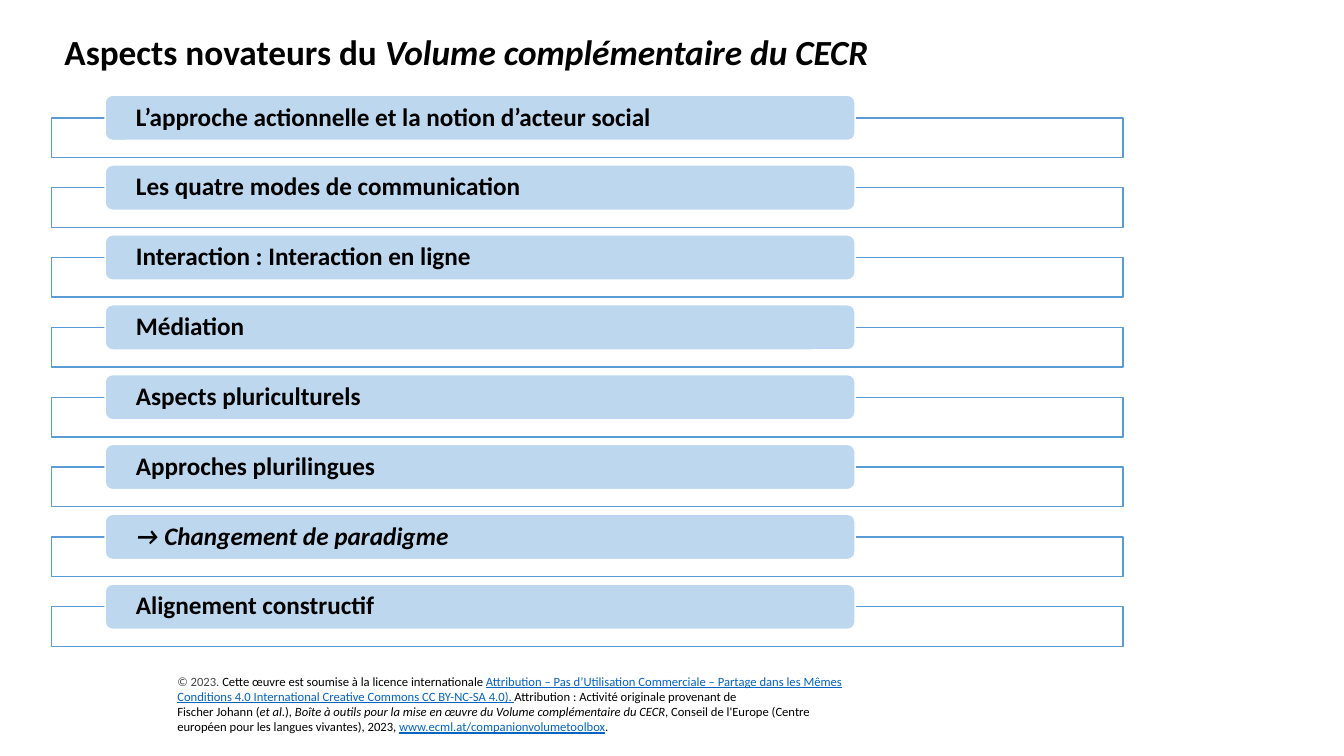
from dataclasses import dataclass

from pptx import Presentation
from pptx.dml.color import RGBColor
from pptx.enum.shapes import MSO_SHAPE as Shape
from pptx.enum.text import MSO_ANCHOR as Anchor, MSO_AUTO_SIZE as AutoSize, PP_ALIGN as Align
from pptx.util import Cm, Pt


@dataclass(frozen=True)
class Theme:
    font: str = "Calibri"
    ink: str = "000000"
    muted: str = "464646"
    link: str = "0563C1"
    white: str = "FFFFFF"
    frame_line: str = "5B9BD5"
    pill_fill: str = "BDD7EE"
    title_size: float = 25.2
    pill_size: float = 18
    credit_size: float = 9


THEME = Theme()

TITLE = [("Aspects novateurs du ", {}), ("Volume complémentaire du CECR", {"italic": True})]

ASPECTS = [
    ("L’approche actionnelle et la notion d’acteur social", {}),
    ("Les quatre modes de communication", {}),
    ("Interaction : Interaction en ligne", {}),
    ("Médiation", {}),
    ("Aspects pluriculturels", {}),
    ("Approches plurilingues", {}),
    ("→ Changement de paradigme", {"italic": True}),
    ("Alignement constructif", {}),
]

LINK = {"color": THEME.link, "underline": True}
CREDIT = [
    [
        ("© 2023. ", {"color": THEME.muted}),
        ("Cette œuvre est soumise à la licence internationale ", {}),
        ("Attribution – Pas d’Utilisation Commerciale – Partage dans les Mêmes Conditions 4.0 "
         "International Creative Commons CC BY-NC-SA 4.0). ", LINK),
        ("Attribution : Activité originale provenant de", {}),
    ],
    [
        ("Fischer Johann (", {}),
        ("et al.", {"italic": True}),
        ("), ", {}),
        ("Boîte à outils pour la mise en œuvre du Volume complémentaire du CECR", {"italic": True}),
        (", Conseil de l'Europe (Centre européen pour les langues vivantes), 2023, ", {}),
        ("www.ecml.at/companionvolumetoolbox", LINK),
        (".", {}),
    ],
]


class SlideBuilder:
    def __init__(self, page, theme):
        self.page = page
        self.theme = theme

    def fill_text(self, frame, paragraphs, size, bold=False, line_spacing=1.0):
        """Fill a text frame with paragraphs given as lists of (text, style) spans."""
        frame.word_wrap = True
        frame.auto_size = AutoSize.NONE
        frame.vertical_anchor = Anchor.MIDDLE
        for index, spans in enumerate(paragraphs):
            para = frame.add_paragraph() if index else frame.paragraphs[0]
            para.alignment = Align.LEFT
            para.line_spacing = line_spacing
            for text, style in spans:
                span = para.add_run()
                span.text = text
                font = span.font
                font.name, font.size, font.bold = self.theme.font, Pt(size), bold
                font.italic = style.get("italic", False)
                font.underline = style.get("underline", False)
                font.color.rgb = RGBColor.from_string(style.get("color", self.theme.ink))

    def title(self, spans, left, top, width, height):
        box = self.page.shapes.title
        box.left, box.top, box.width, box.height = Cm(left), Cm(top), Cm(width), Cm(height)
        self.fill_text(box.text_frame, [spans], self.theme.title_size, bold=True, line_spacing=0.9)

    def shape(self, kind, left, top, width, height, fill, line):
        box = self.page.shapes.add_shape(kind, Cm(left), Cm(top), Cm(width), Cm(height))
        box.shadow.inherit = False
        box.fill.solid()
        box.fill.fore_color.rgb = RGBColor.from_string(fill)
        box.line.color.rgb = RGBColor.from_string(line)
        box.line.width = Pt(1)
        return box

    def aspect(self, span, top):
        """Draw a wide frame with a labelled pill over its top edge."""
        theme = self.theme
        self.shape(Shape.RECTANGLE, 1.3, top + 0.57, 27, 1, theme.white, theme.frame_line)
        pill = self.shape(Shape.ROUNDED_RECTANGLE, 2.65, top, 18.9, 1.14, theme.pill_fill, theme.white)
        frame = pill.text_frame
        frame.margin_left = frame.margin_right = Cm(0.72)
        frame.margin_top = frame.margin_bottom = 0
        self.fill_text(frame, [[span]], theme.pill_size, bold=True, line_spacing=0.9)

    def credit(self, paragraphs, left, top, width, height):
        box = self.page.shapes.add_textbox(Cm(left), Cm(top), Cm(width), Cm(height))
        self.fill_text(box.text_frame, paragraphs, self.theme.credit_size)


def main():
    deck = Presentation()
    deck.slide_width, deck.slide_height = Cm(33.87), Cm(19.05)
    title_only = deck.slide_layouts[5]
    builder = SlideBuilder(deck.slides.add_slide(title_only), THEME)

    builder.title(TITLE, 1.37, 0.79, 31.17, 1.12)
    first_top, pitch = 2.4, 1.76
    for row, span in enumerate(ASPECTS):
        builder.aspect(span, first_top + row * pitch)
    builder.credit(CREDIT, 4.22, 16.84, 17.4, 1.8)

    deck.save("out.pptx")


if __name__ == "__main__":
    main()
